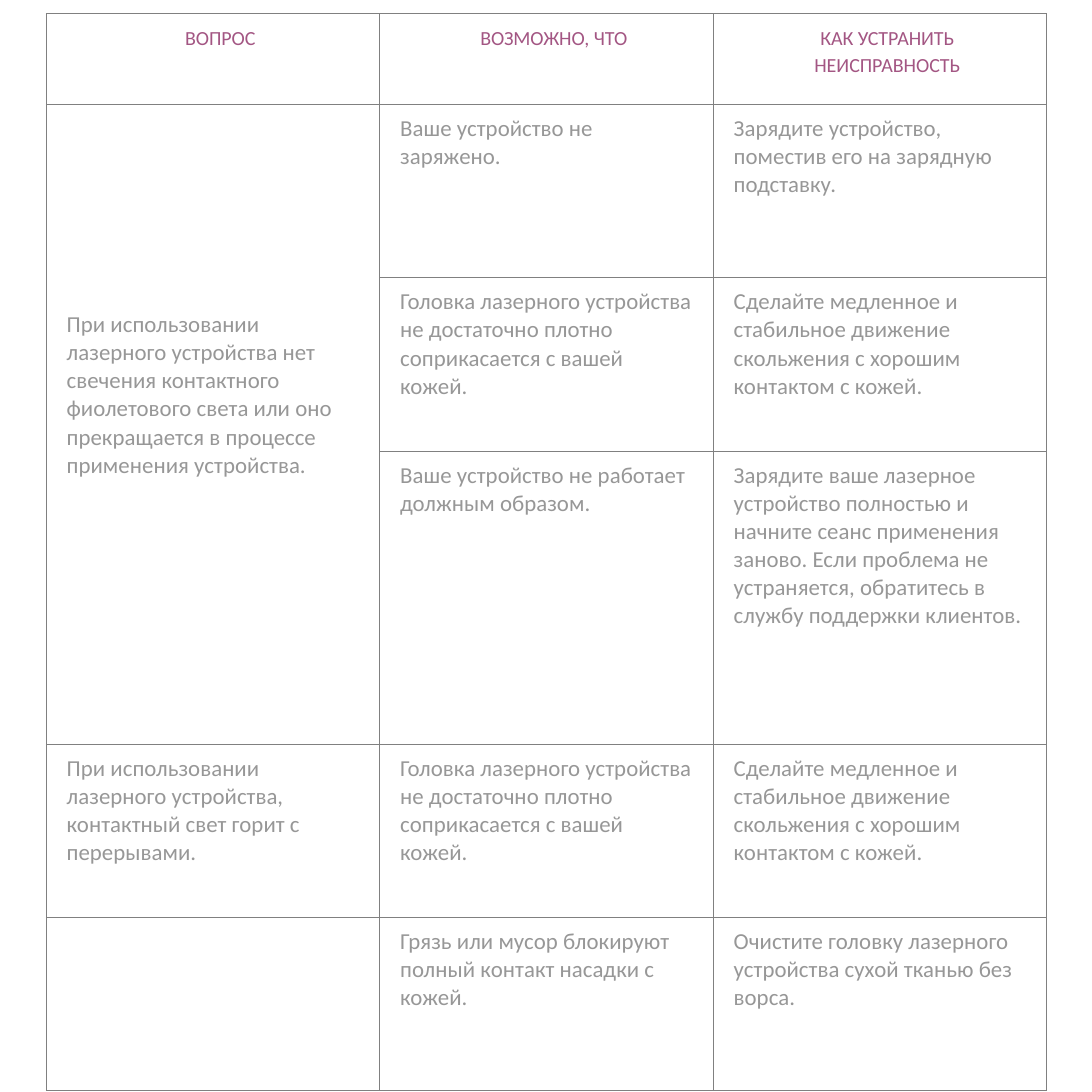
from dataclasses import dataclass

from lxml import etree
from pptx import Presentation
from pptx.dml.color import RGBColor
from pptx.enum.text import PP_ALIGN
from pptx.oxml.ns import qn
from pptx.util import Cm, Pt

CENTER, LEFT = PP_ALIGN.CENTER, PP_ALIGN.LEFT
BLANK = 6

SIDE = 13.49
COL = 4.12
ROWS = [1.12, 2.14, 2.14, 3.62, 2.14, 2.14]
DROP = 2.55  # top margin of the tall question cell

HEAD = ["ВОПРОС", "ВОЗМОЖНО, ЧТО", "КАК УСТРАНИТЬ НЕИСПРАВНОСТЬ"]
TOUCH = [
    "Головка лазерного устройства не достаточно плотно соприкасается с вашей кожей.",
    "Сделайте медленное и стабильное движение скольжения с хорошим контактом с кожей.",
]
BODY = [
    ["При использовании лазерного устройства нет свечения контактного фиолетового "
     "света или оно прекращается в процессе применения устройства.",
     "Ваше устройство не заряжено.",
     "Зарядите устройство, поместив его на зарядную подставку."],
    ["", *TOUCH],
    ["", "Ваше устройство не работает должным образом.",
     "Зарядите ваше лазерное устройство полностью и начните сеанс применения заново. "
     "Если проблема не устраняется, обратитесь в службу поддержки клиентов."],
    ["При использовании лазерного устройства, контактный свет горит с перерывами.",
     *TOUCH],
    ["", "Грязь или мусор блокируют полный контакт насадки с кожей.",
     "Очистите головку лазерного устройства сухой тканью без ворса."],
]


@dataclass
class Theme:
    font: str = "Calibri"
    head: str = "A35683"
    body: str = "979797"
    line: str = "808080"
    small: float = 7
    large: float = 8
    rule: float = 0.25


def assign(item, values):
    for name, value in values.items():
        setattr(item, name, value)


class Page:
    def __init__(self, deck, theme):
        self.theme = theme
        self.slide = deck.slides.add_slide(deck.slide_layouts[BLANK])

    def border(self, cell):
        props = cell._tc.get_or_add_tcPr()
        for side in ("lnL", "lnR", "lnT", "lnB"):
            line = etree.SubElement(props, qn(f"a:{side}"), w=str(Pt(self.theme.rule)))
            fill = etree.SubElement(line, qn("a:solidFill"))
            etree.SubElement(fill, qn("a:srgbClr"), val=self.theme.line)

    def cell(self, cell, text, head):
        theme = self.theme
        self.border(cell)
        cell.fill.background()
        cell.text = text
        para = cell.text_frame.paragraphs[0]
        assign(para, {"alignment": CENTER if head else LEFT,
                      "line_spacing": 1.1 if head else 1.0})
        if head:
            para._p.get_or_add_pPr().set("marL", str(Cm(0.18)))
        assign(para.font, {"name": theme.font, "bold": False,
                           "size": Pt(theme.small if head else theme.large)})
        para.font.color.rgb = RGBColor.from_string(theme.head if head else theme.body)

    def table(self, left, top, rows, col, heights):
        count = len(rows[0])
        frame = self.slide.shapes.add_table(
            len(rows), count, Cm(left), Cm(top), Cm(col * count), Cm(sum(heights)))
        table = frame.table
        assign(table, {"first_row": False, "horz_banding": False})
        for column in table.columns:
            column.width = Cm(col)
        for r, (texts, height) in enumerate(zip(rows, heights)):
            table.rows[r].height = Cm(height)
            for c, text in enumerate(texts):
                self.cell(table.cell(r, c), text, r == 0)
        return table


def main():
    deck = Presentation()
    assign(deck, {"slide_width": Cm(SIDE), "slide_height": Cm(SIDE)})
    page = Page(deck, Theme())
    table = page.table(0.57, 0.17, [HEAD, *BODY], COL, ROWS)
    tall = table.cell(1, 0)
    tall.merge(table.cell(3, 0))
    tall.margin_top = Cm(DROP)
    deck.save("out.pptx")


if __name__ == "__main__":
    main()
